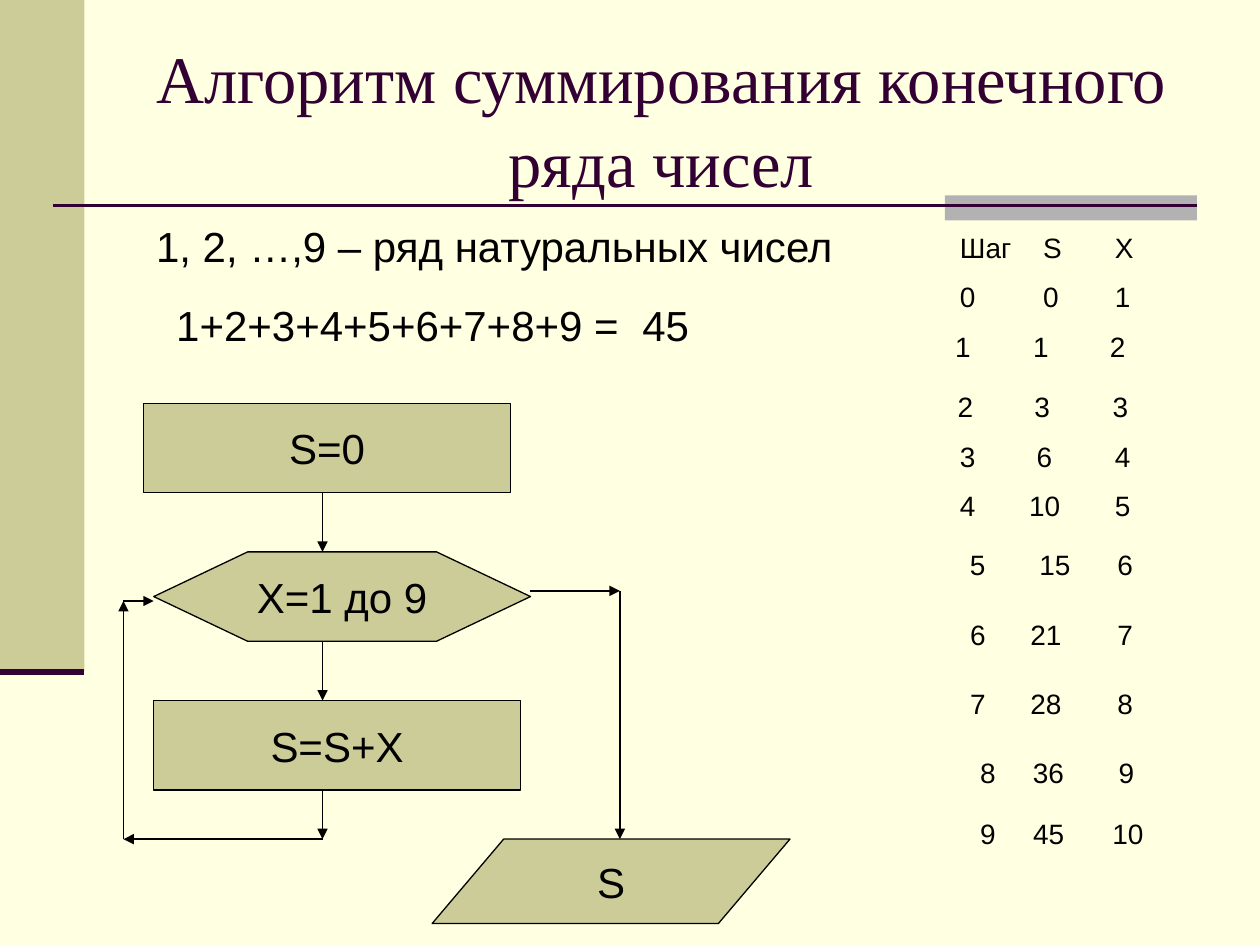
import pptx
import pptx.dml.color
import pptx.enum.shapes
import pptx.enum.text
import pptx.oxml.ns
import pptx.oxml.xmlchemy
import pptx.util
from itertools import pairwise

Inches = pptx.util.Inches
Pt = pptx.util.Pt
Shape = pptx.enum.shapes.MSO_SHAPE
Align = pptx.enum.text.PP_ALIGN
Anchor = pptx.enum.text.MSO_ANCHOR
AutoSize = pptx.enum.text.MSO_AUTO_SIZE
new_element = pptx.oxml.xmlchemy.OxmlElement

CREAM, KHAKI, GRAY, PLUM, BLACK = "FFFFE1", "CCCC99", "B2B2B2", "330033", "000000"

TITLE = "Алгоритм суммирования конечного ряда чисел"

BANDS = [
    ((0, 0, 0.67, 5.33), KHAKI),
    ((7.5, 1.55, 2, 0.2), GRAY),
]
RULES = [
    ([(0.42, 1.63), (9.5, 1.63)], 1.5),
    ([(0, 5.33), (0.67, 5.33)], 3.5),
]
STATEMENTS = [
    ("1, 2, …,9 – ряд натуральных чисел", (1.14, 1.7, 7.09, 0.5)),
    ("1+2+3+4+5+6+7+8+9 =", (1.3, 2.33, 4.02, 0.5)),
    ("45", (5, 2.33, 1.1, 0.5)),
]
BLOCKS = [
    ("S=0", Shape.RECTANGLE, (1.14, 3.2, 2.91, 0.71)),
    ("X=1 до 9", Shape.HEXAGON, (1.22, 4.38, 2.99, 0.71)),
    ("S=S+X", Shape.RECTANGLE, (1.22, 5.56, 2.91, 0.71)),
    ("S", Shape.FLOWCHART_DATA, (3.43, 6.66, 2.84, 0.67)),
]
FLOWS = [
    [(2.56, 3.91), (2.56, 4.38)],
    [(2.56, 5.09), (2.56, 5.56)],
    [(2.56, 6.27), (2.56, 6.66), (0.98, 6.66), (0.98, 4.77), (1.22, 4.77)],
    [(4.21, 4.69), (4.92, 4.69), (4.92, 6.66)],
]
TRACE = [
    (["Шаг\tS\tX", "0\t0\t1"], (7.52, 1.78, 2.05, 0.77), (7.62, 8.28, 8.85)),
    (["1\t1\t2"], (7.36, 2.57, 2.2, 0.37), (7.58, 8.2, 8.81)),
    (["2\t3\t3"], (7.44, 3.04, 2.05, 0.37), (7.6, 8.21, 8.83)),
    (["3\t6\t4"], (7.52, 3.44, 2.2, 0.37), (7.62, 8.23, 8.85)),
    (["4\t10\t5"], (7.52, 3.83, 2.36, 0.37), (7.62, 8.17, 8.85)),
    (["5\t15\t6"], (7.6, 4.3, 1.73, 0.37), (7.7, 8.25, 8.87)),
    (["6\t21\t7"], (7.6, 4.85, 1.65, 0.37), (7.7, 8.18, 8.87)),
    (["7\t28\t8"], (7.6, 5.4, 1.65, 0.37), (7.7, 8.18, 8.87)),
    (["8\t36\t9"], (7.68, 5.95, 1.73, 0.37), (7.78, 8.2, 8.88)),
    (["9\t45\t10"], (7.68, 6.43, 1.89, 0.37), (7.78, 8.2, 8.83)),
]


def box(place):
    return [Inches(length) for length in place]


def color(hex_string):
    return pptx.dml.color.RGBColor.from_string(hex_string)


def write(shape, *texts, size=24, font="Arial", ink=BLACK, align=Align.LEFT,
          anchor=Anchor.TOP, wrap=True, auto_size=AutoSize.NONE, spacing=None):
    frame = shape.text_frame
    frame.auto_size = auto_size
    frame.word_wrap = wrap
    frame.vertical_anchor = anchor
    for index, text in enumerate(texts):
        paragraph = frame.add_paragraph() if index else frame.paragraphs[0]
        paragraph.alignment = align
        paragraph.line_spacing = spacing
        if index:
            paragraph.space_before = Pt(size * 0.56)
        run = paragraph.add_run()
        run.text = text
        run.font.size = Pt(size)
        run.font.name = font
        run.font.color.rgb = color(ink)


def add_text(slide, place, *texts, **style):
    shape = slide.shapes.add_textbox(*box(place))
    write(shape, *texts, auto_size=AutoSize.SHAPE_TO_FIT_TEXT, **style)
    return shape


def add_block(slide, kind, place, fill, line=None):
    shape = slide.shapes.add_shape(kind, *box(place))
    shape.shadow.inherit = False
    shape.fill.solid()
    shape.fill.fore_color.rgb = color(fill)
    if line:
        shape.line.color.rgb = color(line)
        shape.line.width = Pt(0.75)
    else:
        shape.line.fill.background()
    return shape


def add_lines(slide, points, ink, width, arrow=False):
    for start, end in pairwise(points):
        connector = slide.shapes.add_connector(
            pptx.enum.shapes.MSO_CONNECTOR.STRAIGHT, *box(start + end))
        connector.line.color.rgb = color(ink)
        connector.line.width = Pt(width)
        properties = connector._element.spPr
        if arrow:
            head = new_element("a:tailEnd")
            head.set("type", "triangle")
            properties.find(pptx.oxml.ns.qn("a:ln")).append(head)
        properties.append(new_element("a:effectLst"))


def add_tabs(paragraph, positions):
    tab_list = new_element("a:tabLst")
    for position in positions:
        tab = new_element("a:tab")
        tab.set("pos", str(Inches(position)))
        tab.set("algn", "l")
        tab_list.append(tab)
    paragraph._p.get_or_add_pPr().append(tab_list)


def main():
    presentation = pptx.Presentation()
    presentation.slide_width, presentation.slide_height = Inches(10), Inches(7.5)
    slide = presentation.slides.add_slide(presentation.slide_layouts[5])
    slide.background.fill.solid()
    slide.background.fill.fore_color.rgb = color(CREAM)

    for place, fill in BANDS:
        add_block(slide, Shape.RECTANGLE, place, fill)
    for points, width in RULES:
        add_lines(slide, points, PLUM, width)

    title = slide.shapes.title
    title.left, title.top, title.width, title.height = box((1, 0.3, 8.5, 1.25))
    write(title, TITLE, size=38, font="Times New Roman", ink=PLUM,
          align=Align.CENTER, anchor=Anchor.MIDDLE, spacing=1.05)

    for text, place in STATEMENTS:
        add_text(slide, place, text)

    for text, kind, place in BLOCKS:
        block = add_block(slide, kind, place, KHAKI, BLACK)
        if kind == Shape.HEXAGON:
            block.adjustments[0] = 1.05
        write(block, text, align=Align.CENTER, anchor=Anchor.MIDDLE, wrap=False)
    for points in FLOWS:
        add_lines(slide, points, BLACK, 0.75, arrow=True)

    for rows, place, columns in TRACE:
        shape = add_text(slide, place, *rows, size=16)
        shape.text_frame.margin_left = Inches(columns[0] - place[0])
        for paragraph in shape.text_frame.paragraphs:
            add_tabs(paragraph, [column - columns[0] for column in columns[1:]])

    presentation.save("out.pptx")


if __name__ == "__main__":
    main()
